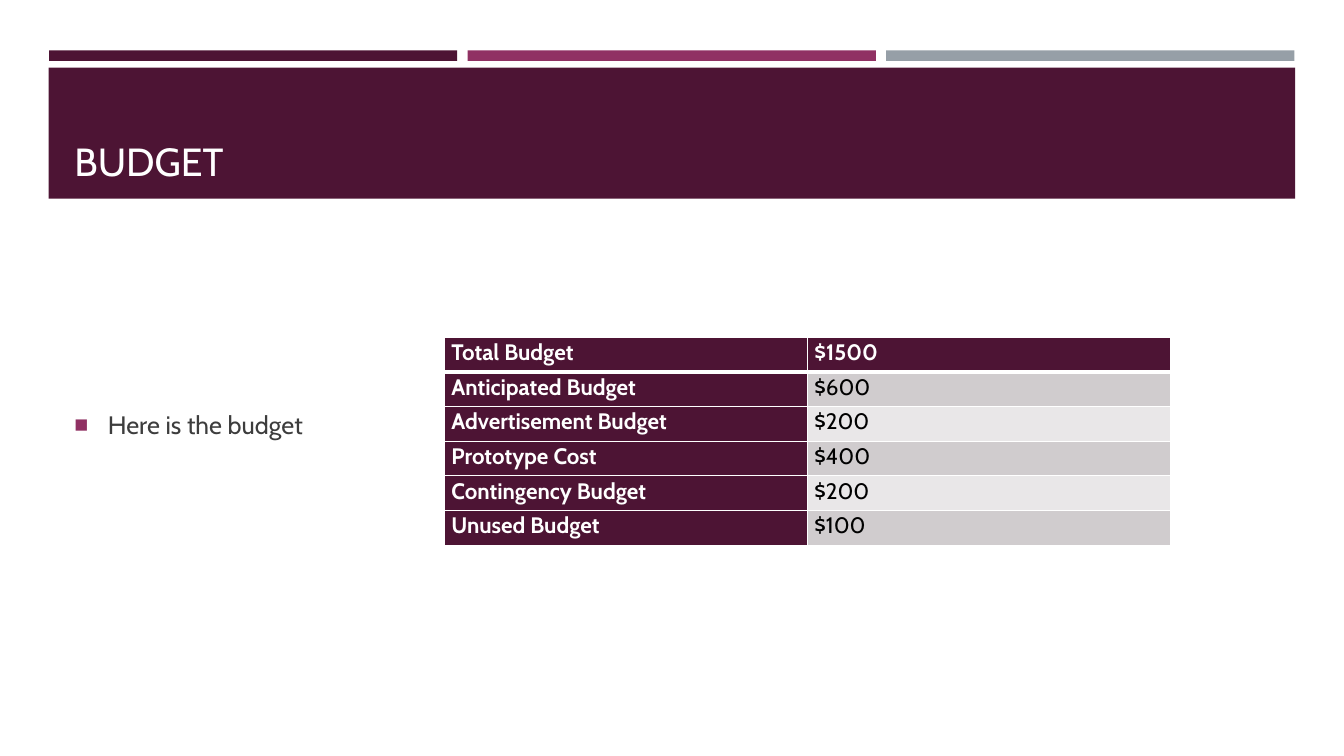
from typing import NamedTuple

from lxml.etree import SubElement
from pptx import Presentation
from pptx.dml.color import RGBColor
from pptx.enum.shapes import MSO_SHAPE
from pptx.enum.text import MSO_ANCHOR, PP_ALIGN
from pptx.oxml import parse_xml
from pptx.oxml.ns import nsdecls, qn
from pptx.util import Pt

FONT = "Cabin"
PLUM, MAGENTA, GREY = "4D1434", "903163", "969FA7"
WHITE, BLACK, BODY = "FFFFFF", "000000", "3D3D3D"
BANDS = ("D0CCCE", "E9E7E8")
ROW_HEIGHT, COLUMN_WIDTH = 24.8, 259.2


class Bar(NamedTuple):
    left: float
    top: float
    width: float
    height: float
    color: str


class BudgetRow(NamedTuple):
    label: str
    amount: str


BARS = [Bar(35 + i * 299, 36, 291.6, 7.6, color)
        for i, color in enumerate((PLUM, MAGENTA, GREY))]
TITLE_BAND = Bar(34.8, 48.4, 890.4, 93.6, PLUM)

BUDGET = [
    BudgetRow("Total Budget", "$1500"),
    BudgetRow("Anticipated Budget", "$600"),
    BudgetRow("Advertisement Budget", "$200"),
    BudgetRow("Prototype Cost", "$400"),
    BudgetRow("Contingency Budget", "$200"),
    BudgetRow("Unused Budget", "$100"),
]


def rgb(color: str) -> RGBColor:
    return RGBColor.from_string(color)


def write(tf, text: str, *, size: float, color: str, bold: bool = False,
          anchor=MSO_ANCHOR.TOP, line_spacing: float = 1.0):
    tf.word_wrap = True
    tf.vertical_anchor = anchor
    p = tf.paragraphs[0]
    p.alignment = PP_ALIGN.LEFT
    p.line_spacing = line_spacing
    r = p.add_run()
    r.text = text
    r.font.name = FONT
    r.font.size = Pt(size)
    r.font.bold = bold
    r.font.color.rgb = rgb(color)
    return p


def add_bar(slide, bar: Bar) -> None:
    sp = slide.shapes.add_shape(MSO_SHAPE.RECTANGLE, Pt(bar.left), Pt(bar.top),
                                Pt(bar.width), Pt(bar.height))
    sp.shadow.inherit = False
    sp.fill.solid()
    sp.fill.fore_color.rgb = rgb(bar.color)
    sp.line.fill.background()


def add_title(slide, text: str) -> None:
    title = slide.shapes.title
    title.left, title.top = Pt(46), Pt(55.4)
    title.width, title.height = Pt(868), Pt(80)
    write(title.text_frame, text, size=28, color=WHITE, anchor=MSO_ANCHOR.BOTTOM)
    # The title must lie in front of its band
    slide.shapes.element.append(title.element)


def add_bullet(slide, text: str) -> None:
    box = slide.shapes.add_textbox(Pt(46), Pt(285), Pt(260), Pt(36))
    p = write(box.text_frame, text, size=18, color=BODY, anchor=MSO_ANCHOR.MIDDLE)
    pPr = p._p.get_or_add_pPr()
    pPr.set("marL", str(Pt(24)))
    pPr.set("indent", str(-Pt(24)))
    SubElement(SubElement(pPr, qn("a:buClr")), qn("a:srgbClr"), val=MAGENTA)
    SubElement(pPr, qn("a:buSzPct"), val="92000")
    SubElement(pPr, qn("a:buFont"), typeface="Arial")
    SubElement(pPr, qn("a:buChar"), char="■")


def set_borders(tcPr, row: int) -> None:
    """White cell borders, with a thick rule below the header row."""
    widths = {"L": 1, "R": 1, "T": 3 if row == 1 else 1, "B": 3 if row == 0 else 1}
    for i, (side, width) in enumerate(widths.items()):
        tcPr.insert(i, parse_xml(
            f'<a:ln{side} {nsdecls("a")} w="{Pt(width)}"><a:solidFill>'
            f'<a:srgbClr val="{WHITE}"/></a:solidFill></a:ln{side}>'))


def add_budget_table(slide, rows: list[BudgetRow]) -> None:
    columns = len(BudgetRow._fields)
    frame = slide.shapes.add_table(len(rows), columns, Pt(317.5), Pt(240.8),
                                   Pt(columns * COLUMN_WIDTH),
                                   Pt(len(rows) * ROW_HEIGHT))
    table = frame.table
    for i, row in enumerate(rows):
        table.rows[i].height = Pt(ROW_HEIGHT)
        for j, text in enumerate(row):
            heading = i == 0 or j == 0
            cell = table.cell(i, j)
            cell.margin_left = cell.margin_right = Pt(5)
            cell.margin_top = cell.margin_bottom = 0
            cell.fill.solid()
            cell.fill.fore_color.rgb = rgb(PLUM if heading else BANDS[(i - 1) % 2])
            write(cell.text_frame, text, size=16, bold=heading,
                  color=WHITE if heading else BLACK, line_spacing=1.07)
    for k, tcPr in enumerate(frame.element.iter(qn("a:tcPr"))):
        set_borders(tcPr, k // columns)


def main() -> None:
    prs = Presentation()
    prs.slide_width, prs.slide_height = Pt(960), Pt(540)
    slide = prs.slides.add_slide(prs.slide_layouts.get_by_name("Title Only"))
    for bar in (*BARS, TITLE_BAND):
        add_bar(slide, bar)
    add_title(slide, "BUDGET")
    add_bullet(slide, "Here is the budget")
    add_budget_table(slide, BUDGET)
    prs.save("out.pptx")


if __name__ == "__main__":
    main()
